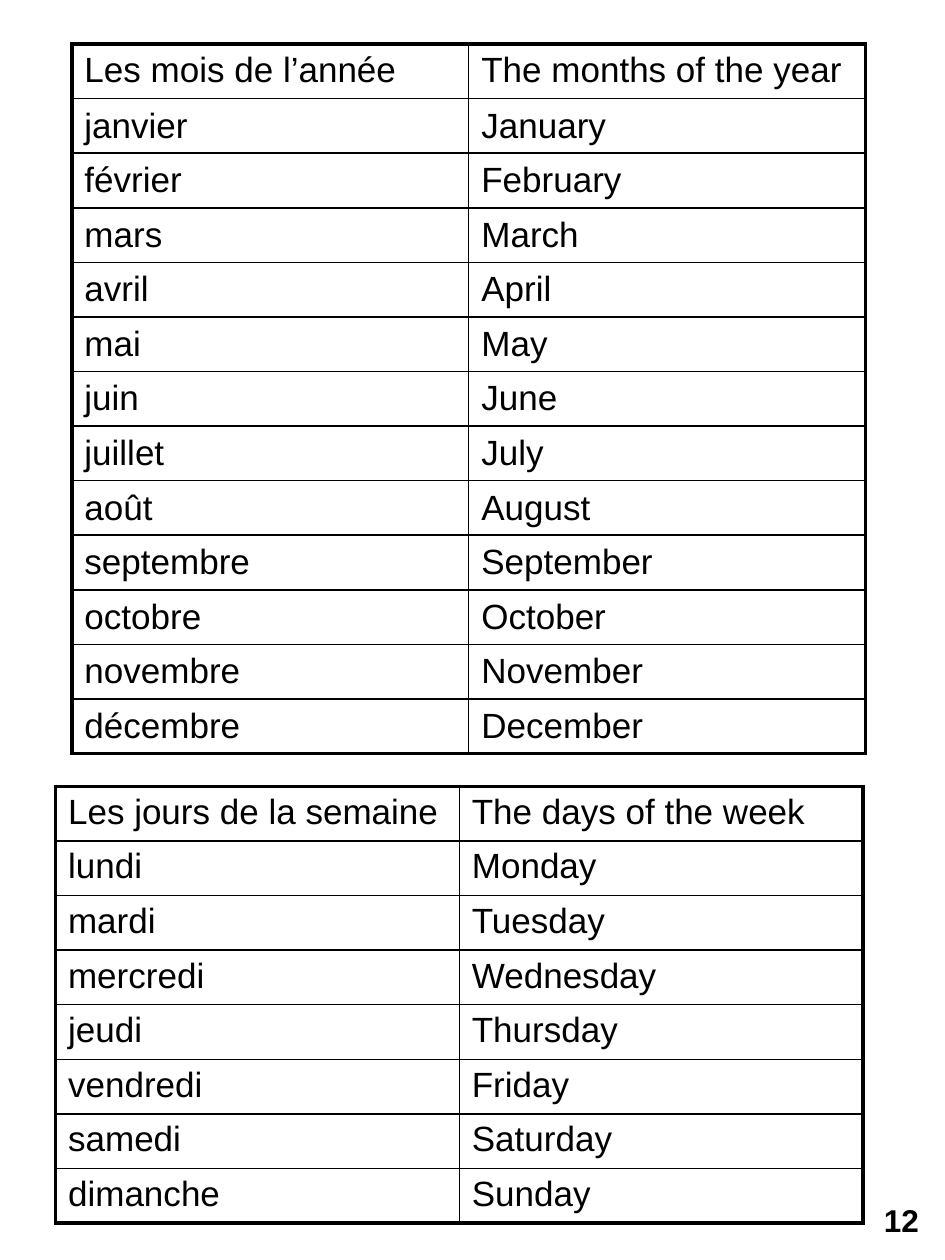
from lxml import etree
from pptx import Presentation
from pptx import util as u
from pptx.dml.color import RGBColor
from pptx.enum import shapes, text
from pptx.oxml.ns import qn

MONTHS = [
    ("Les mois de l’année", "The months of the year"),
    ("janvier", "January"),
    ("février", "February"),
    ("mars", "March"),
    ("avril", "April"),
    ("mai", "May"),
    ("juin", "June"),
    ("juillet", "July"),
    ("août", "August"),
    ("septembre", "September"),
    ("octobre", "October"),
    ("novembre", "November"),
    ("décembre", "December"),
]
DAYS = [
    ("Les jours de la semaine", "The days of the week"),
    ("lundi", "Monday"),
    ("mardi", "Tuesday"),
    ("mercredi", "Wednesday"),
    ("jeudi", "Thursday"),
    ("vendredi", "Friday"),
    ("samedi", "Saturday"),
    ("dimanche", "Sunday"),
]


def rgb(value):
    return RGBColor.from_string(value)


class Page:
    font = "Arial"
    ink = "000000"
    outer, inner = 2.25, 1

    def __init__(self, prs):
        self.s = prs.slides.add_slide(prs.slide_layouts[6])

    def style(self, p, size, bold=False):
        for r in p.runs:
            r.font.name = self.font
            r.font.size = u.Pt(size)
            r.font.bold = bold
            r.font.color.rgb = rgb(self.ink)

    def borders(self, cell, widths):
        """Draw the left, right, top and bottom borders, in that order."""
        tcPr = cell._tc.get_or_add_tcPr()
        for i, (side, width) in enumerate(zip("LRTB", widths)):
            ln = etree.Element(qn(f"a:ln{side}"), w=str(u.Pt(width)))
            fill = etree.SubElement(ln, qn("a:solidFill"))
            etree.SubElement(fill, qn("a:srgbClr"), val=self.ink)
            tcPr.insert(i, ln)

    def table(self, rows, left, top, width, height, body_anchor):
        n, m = len(rows), len(rows[0])
        tbl = self.s.shapes.add_table(n, m, u.Inches(left), u.Inches(top),
                                      u.Inches(width), u.Inches(height)).table
        tbl.first_row = tbl.horz_banding = False
        for i, row in enumerate(rows):
            for j, word in enumerate(row):
                cell = tbl.cell(i, j)
                cell.text_frame.text = word
                cell.vertical_anchor = body_anchor if i else text.MSO_ANCHOR.TOP
                cell.fill.background()
                self.style(cell.text_frame.paragraphs[0], 20)
                edges = (j == 0, j == m - 1, i == 0, i == n - 1)
                self.borders(cell, [self.outer if e else self.inner for e in edges])

    def page_number(self, number, left, top, width, height):
        sp = self.s.shapes.add_shape(shapes.MSO_SHAPE.ROUNDED_RECTANGLE,
                                     u.Inches(left), u.Inches(top),
                                     u.Inches(width), u.Inches(height))
        sp.shadow.inherit = False
        sp.fill.background()
        sp.line.fill.background()
        tf = sp.text_frame
        tf.text = number
        tf.vertical_anchor = text.MSO_ANCHOR.MIDDLE
        p = tf.paragraphs[0]
        p.alignment = text.PP_ALIGN.CENTER
        self.style(p, 18, bold=True)


def main():
    prs = Presentation()
    prs.slide_width, prs.slide_height = u.Inches(7.5), u.Inches(10)
    page = Page(prs)

    # Vocabulary tables
    page.table(MONTHS, 0.57, 0.35, 6.3, 5.63, text.MSO_ANCHOR.MIDDLE)
    page.table(DAYS, 0.44, 6.24, 6.41, 3.47, text.MSO_ANCHOR.TOP)

    # Page number
    page.page_number("12", 6.88, 9.45, 0.55, 0.47)

    prs.save("out.pptx")


if __name__ == "__main__":
    main()
